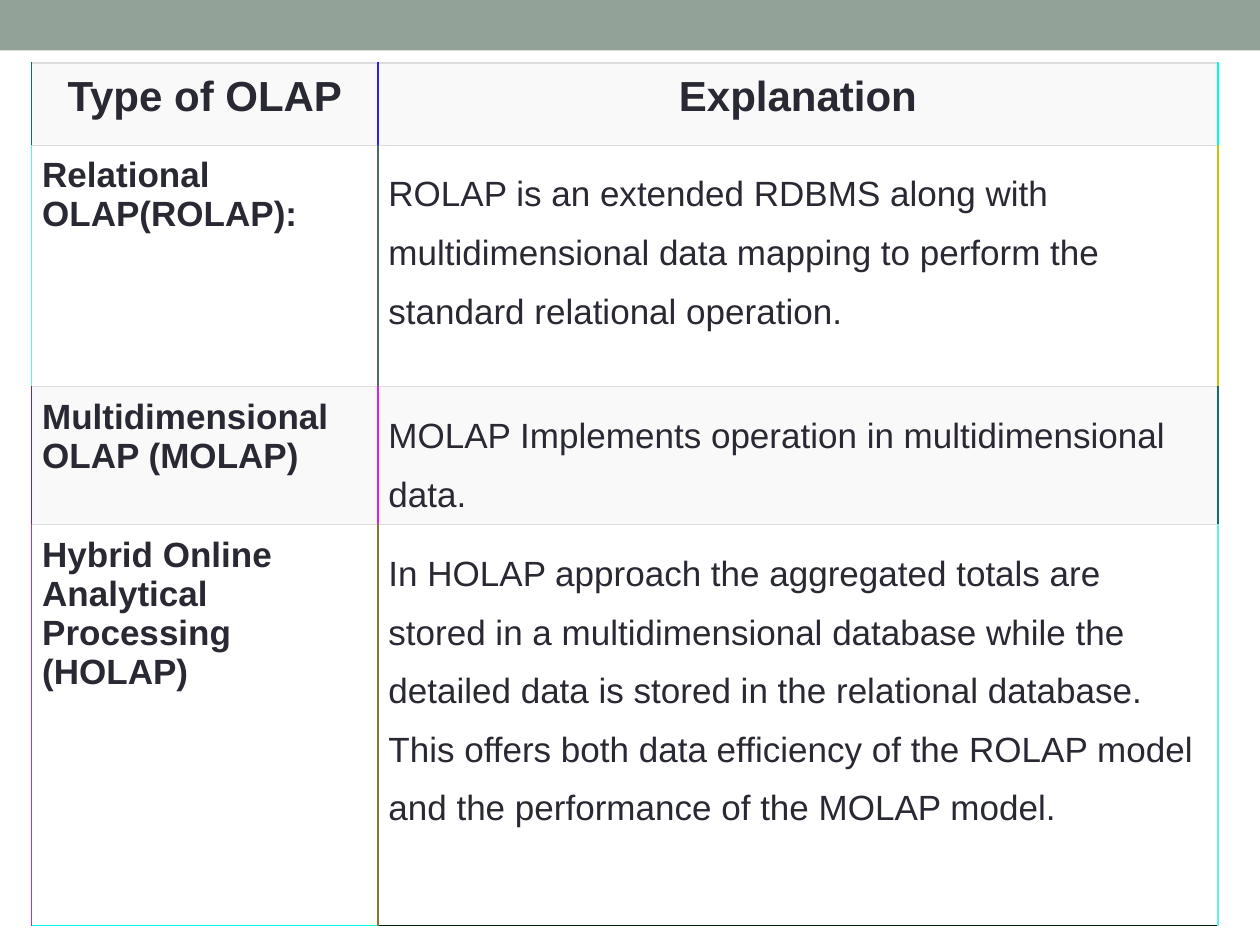
import pptx
import pptx.dml.color
import pptx.enum.shapes
import pptx.enum.text
import pptx.oxml
import pptx.oxml.ns
import pptx.util
from pptx.util import Cm

COLOURS = {
    "band": "93A299", "text": "292934", "shade": "F9F9F9", "plain": "FFFFFF",
    "grid": "DDDDDD", "teal": "106E64", "blue": "3021E7", "cyan": "00FCE3",
    "aqua": "60F2E3", "slate": "506964", "mustard": "C0C310",
    "violet": "5025E3", "magenta": "E01DE6", "purple": "B02FE7",
    "olive": "80782C", "forest": "002409",
}
COLUMN_WIDTHS = [6.98, 16.93]
ROW_HEIGHTS = [1.66, 4.87, 2.77, 8.08]
ROWS = [
    ("Type of OLAP", "Explanation"),
    ("Relational OLAP(ROLAP):",
     "ROLAP is an extended RDBMS along with multidimensional data mapping "
     "to perform the standard relational operation."),
    ("Multidimensional OLAP (MOLAP)",
     "MOLAP Implements operation in multidimensional data."),
    ("Hybrid Online Analytical Processing (HOLAP)",
     "In HOLAP approach the aggregated totals are stored in a "
     "multidimensional database while the detailed data is stored in the "
     "relational database. This offers both data efficiency of the ROLAP "
     "model and the performance of the MOLAP model."),
]
VERTICAL_RULES = [
    ("teal", "blue", "cyan"),
    ("aqua", "slate", "mustard"),
    ("violet", "magenta", "teal"),
    ("purple", "olive", "aqua"),
]
BOTTOM_RULES = ("cyan", "forest")


class SlideBuilder:
    font = "Arial"
    header_size = 24
    body_size = 20
    margin = Cm(0.21)

    def __init__(self, page):
        self.page = page

    def colour(self, name):
        return pptx.dml.color.RGBColor.from_string(COLOURS[name])

    def band(self, left, top, width, height):
        box = self.page.shapes.add_shape(
            pptx.enum.shapes.MSO_SHAPE.RECTANGLE, left, top, width, height)
        box.shadow.inherit = False
        box.fill.solid()
        box.fill.fore_color.rgb = self.colour("band")
        box.line.fill.background()

    def borders(self, cell, rules):
        properties = cell._tc.get_or_add_tcPr()
        for position, (side, (name, points)) in enumerate(rules.items()):
            line = pptx.oxml.parse_xml(
                f'<a:ln{side} {pptx.oxml.ns.nsdecls("a")} '
                f'w="{pptx.util.Pt(points)}"><a:solidFill>'
                f'<a:srgbClr val="{COLOURS[name]}"/></a:solidFill></a:ln{side}>')
            properties.insert(position, line)

    def cell(self, cell, text, fill, size, bold, centred, spacing):
        cell.margin_left = cell.margin_right = self.margin
        cell.margin_top = cell.margin_bottom = self.margin
        cell.fill.solid()
        cell.fill.fore_color.rgb = self.colour(fill)
        cell.text_frame.text = text
        para = cell.text_frame.paragraphs[0]
        if centred:
            para.alignment = pptx.enum.text.PP_ALIGN.CENTER
        if spacing:
            para.line_spacing = spacing
        for span in para.runs:
            span.font.name = self.font
            span.font.size = pptx.util.Pt(size)
            span.font.bold = bold
            span.font.color.rgb = self.colour("text")

    def table(self, left, top):
        table = self.page.shapes.add_table(
            len(ROWS), len(COLUMN_WIDTHS), left, top,
            Cm(sum(COLUMN_WIDTHS)), Cm(sum(ROW_HEIGHTS))).table
        table.first_row = False
        table.horz_banding = False
        for column, width in zip(table.columns, COLUMN_WIDTHS):
            column.width = Cm(width)
        for row, height in zip(table.rows, ROW_HEIGHTS):
            row.height = Cm(height)
        for r, texts in enumerate(ROWS):
            header = r == 0
            last = r == len(ROWS) - 1
            for c, text in enumerate(texts):
                cell = table.cell(r, c)
                explanation = c == 1 and not header
                self.cell(
                    cell, text,
                    fill="plain" if r % 2 else "shade",
                    size=self.header_size if header else self.body_size,
                    bold=not explanation,
                    centred=header,
                    spacing=1.5 if explanation else None)
                self.borders(cell, {
                    "L": (VERTICAL_RULES[r][c], 1),
                    "R": (VERTICAL_RULES[r][c + 1], 1),
                    "T": ("grid", 0.75),
                    "B": (BOTTOM_RULES[c], 1) if last else ("grid", 0.75),
                })


def main():
    deck = pptx.Presentation()
    deck.slide_width = Cm(25.4)
    deck.slide_height = Cm(19.05)
    builder = SlideBuilder(deck.slides.add_slide(deck.slide_layouts[6]))
    builder.band(Cm(0), Cm(0), deck.slide_width, Cm(1.02))
    builder.table(Cm(0.64), Cm(1.27))
    deck.save("out.pptx")


if __name__ == "__main__":
    main()
